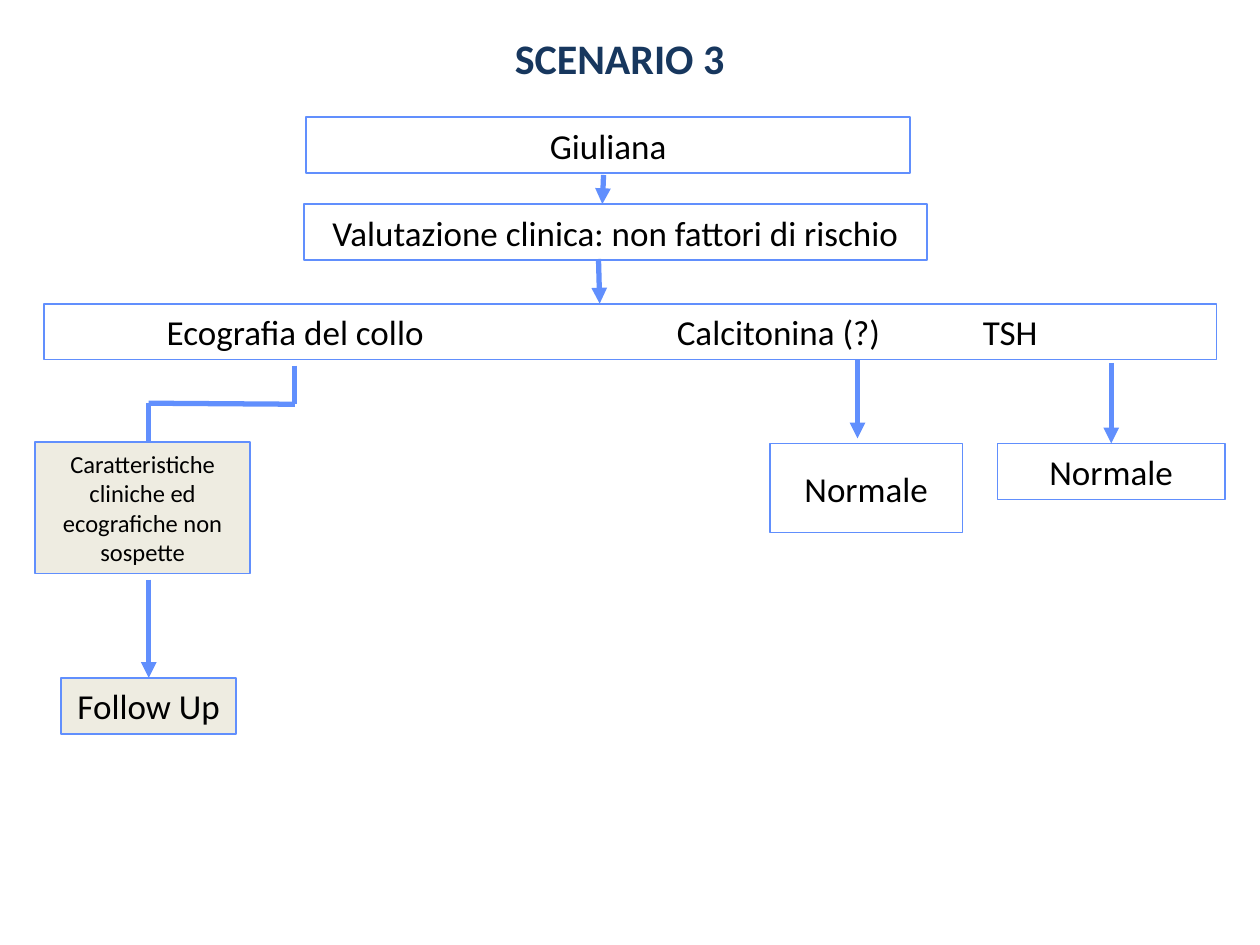
from dataclasses import dataclass

from lxml import etree
from pptx import Presentation
from pptx.dml.color import RGBColor
from pptx.enum.shapes import MSO_CONNECTOR, MSO_SHAPE
from pptx.enum.text import MSO_ANCHOR, PP_ALIGN
from pptx.oxml.ns import qn
from pptx.util import Pt

RECT = MSO_SHAPE.RECTANGLE
STRAIGHT = MSO_CONNECTOR.STRAIGHT
CENTER, LEFT = PP_ALIGN.CENTER, PP_ALIGN.LEFT
MIDDLE = MSO_ANCHOR.MIDDLE
TOP_SIDE = 0


@dataclass(frozen=True)
class Theme:
    """Colours, font and sizes of the flowchart."""
    font: str = "Calibri"
    blue: RGBColor = RGBColor(0x61, 0x8F, 0xFD)
    beige: RGBColor = RGBColor(0xEE, 0xEC, 0xE1)
    text: RGBColor = RGBColor(0, 0, 0)
    navy: RGBColor = RGBColor(0x17, 0x37, 0x5E)
    title: int = 24
    body: int = 20
    small: int = 14
    border: int = 1
    link: int = 3


THEME = Theme()


def set_text(sp, text, size, color, align=CENTER, bold=False):
    """Write one paragraph, centred vertically in its shape."""
    tf = sp.text_frame
    tf.word_wrap = True
    tf.vertical_anchor = MIDDLE
    p = tf.paragraphs[0]
    p.text = text
    p.alignment = align
    p.font.name = THEME.font
    p.font.size = Pt(size)
    p.font.bold = bold
    p.font.color.rgb = color
    return p


def add_title(s, text, x, y, w, h):
    """Add the slide title."""
    sp = s.shapes.add_textbox(Pt(x), Pt(y), Pt(w), Pt(h))
    set_text(sp, text, THEME.title, THEME.navy, bold=True)


def add_box(s, text, x, y, w, h=32, size=THEME.body, fill=None, align=CENTER):
    """Add a bordered step of the flowchart."""
    sp = s.shapes.add_shape(RECT, Pt(x), Pt(y), Pt(w), Pt(h))
    sp.shadow.inherit = False
    if fill is None:
        sp.fill.background()
    else:
        sp.fill.solid()
        sp.fill.fore_color.rgb = fill
    sp.line.color.rgb = THEME.blue
    sp.line.width = Pt(THEME.border)
    set_text(sp, text, size, THEME.text, align)
    return sp


def add_exam_row(s, exams, stops, x, y, w):
    """Add a wide box with one exam at each tab stop."""
    text = "".join(f"\t{exam}" for exam in exams)
    sp = add_box(s, text, x, y, w, align=LEFT)
    pPr = sp.text_frame.paragraphs[0]._p.get_or_add_pPr()
    tabs = etree.Element(qn("a:tabLst"))
    for stop in stops:
        etree.SubElement(tabs, qn("a:tab"), pos=str(Pt(stop)), algn="l")
    pPr.insert(0, tabs)


def add_link(s, x1, y1, x2, y2, arrow=True, target=None):
    """Add a line or arrow, joined to the top of its target if given."""
    c = s.shapes.add_connector(STRAIGHT, Pt(x1), Pt(y1), Pt(x2), Pt(y2))
    c.line.color.rgb = THEME.blue
    c.line.width = Pt(THEME.link)
    if arrow:
        etree.SubElement(c.line._get_or_add_ln(), qn("a:tailEnd"), type="triangle")
    etree.SubElement(c._element.spPr, qn("a:effectLst"))
    if target is not None:
        c.end_connect(target, TOP_SIDE)


def main():
    """Build and save the slide."""
    prs = Presentation()
    prs.slide_width, prs.slide_height = Pt(720), Pt(540)
    s = prs.slides.add_slide(prs.slide_layouts[6])

    add_title(s, "SCENARIO 3", 188.6, 15, 331, 36)
    add_box(s, "Giuliana", 175, 67, 345)
    add_box(s, "Valutazione clinica: non fattori di rischio", 173.5, 116.6, 356.4)
    add_exam_row(s, ["Ecografia del collo", "Calcitonina (?)", "TSH"],
                 [63, 354.5, 529.3], 25.2, 173.5, 670)
    add_box(s, "Caratteristiche cliniche ed ecografiche non sospette",
            20, 252.7, 123, 75, THEME.small, THEME.beige)
    follow_up = add_box(s, "Follow Up", 35, 387.4, 100, fill=THEME.beige)
    add_box(s, "Normale", 440, 253.4, 110, 51)
    tsh_result = add_box(s, "Normale", 570, 253.4, 130)

    add_link(s, 344.9, 100, 344.2, 116.6)
    add_link(s, 342, 148, 342.7, 173.5)
    add_link(s, 490, 205.5, 490, 250.5)
    add_link(s, 635, 207.4, 635, 253.4, target=tsh_result)
    add_link(s, 85, 331.2, 85, 387.4, target=follow_up)

    elbow = [(168.5, 209), (168.5, 231), (85, 230.4), (85, 252.7)]
    for start, end in zip(elbow, elbow[1:]):
        add_link(s, *start, *end, arrow=False)

    prs.save("out.pptx")


if __name__ == "__main__":
    main()
